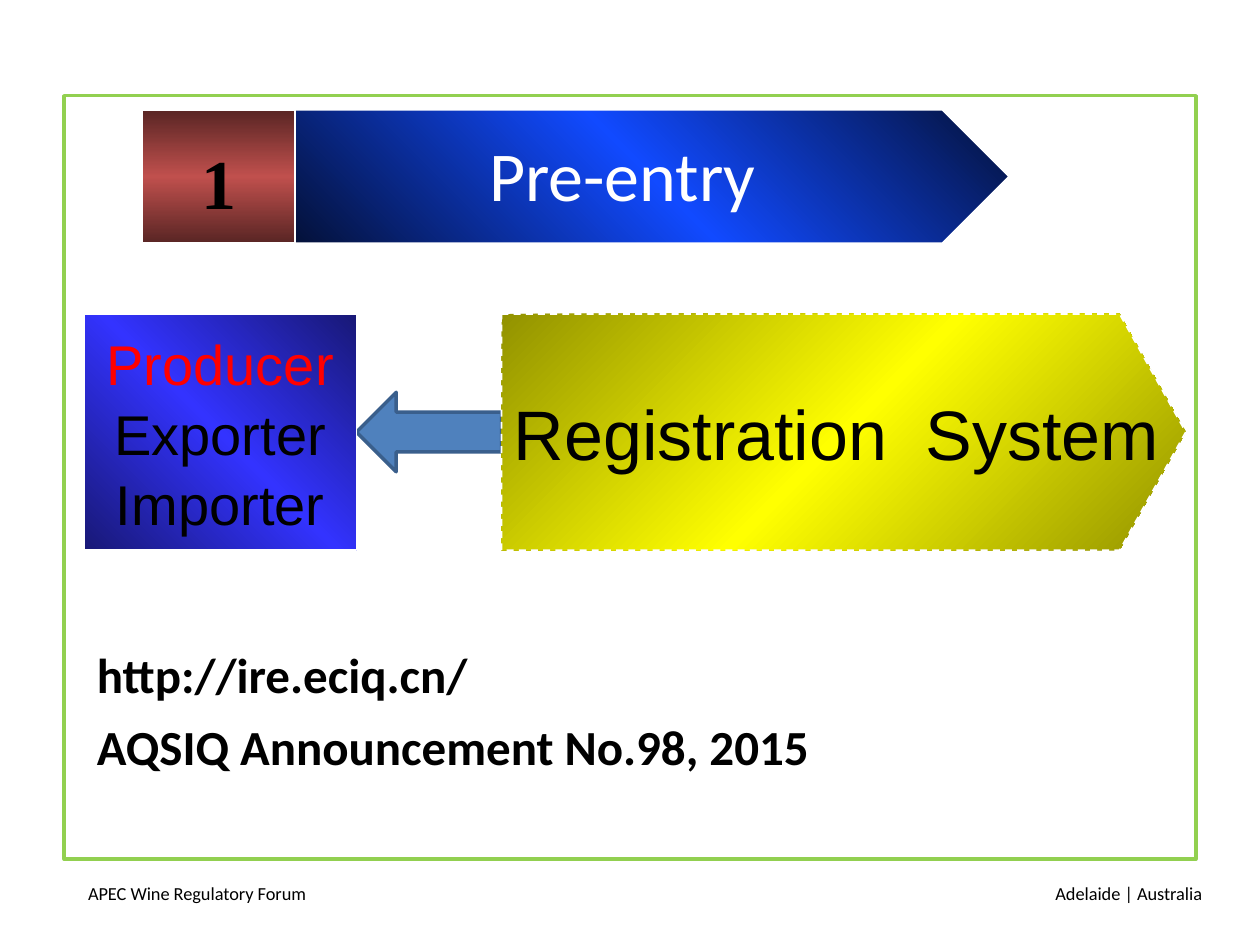
from copy import deepcopy
from dataclasses import dataclass

from pptx import Presentation
from pptx.dml.color import RGBColor
from pptx.enum.dml import MSO_LINE_DASH_STYLE as Dash
from pptx.enum.shapes import MSO_SHAPE as Shape
from pptx.enum.text import MSO_ANCHOR as Anchor, MSO_AUTO_SIZE as AutoSize, PP_ALIGN as Align
from pptx.oxml.xmlchemy import OxmlElement
from pptx.util import Pt


@dataclass(frozen=True)
class Theme:
    body_font: str = "Calibri"
    shape_font: str = "Arial"
    number_font: str = "Times New Roman"
    heading: int = 40
    role: int = 32
    reference: int = 28
    footer: float = 10.5
    black: str = "000000"
    white: str = "FFFFFF"
    highlight: str = "FF0000"
    frame: str = "92D050"
    arrow: str = "4F81BD"
    arrow_line: str = "3A5F8C"
    navy: tuple = ("041139", "114AFF")
    brick: tuple = ("592524", "C0504D")
    yellow: tuple = ("929200", "FFFF00")
    indigo: tuple = ("181876", "3333FF")


THEME = Theme()
TITLE = "Pre-entry"
NUMBER = "1"
SYSTEM = "Registration  System"
ROLES = [("Producer", THEME.highlight), ("Exporter", THEME.black), ("Importer", THEME.black)]
REFERENCES = ["http://ire.eciq.cn/", "AQSIQ Announcement No.98, 2015"]
FOOTERS = [
    ("APEC Wine Regulatory Forum", 43.2, Align.LEFT),
    ("Adelaide | Australia", 524.9, Align.RIGHT),
]

BANNER_TOP, BANNER_HEIGHT = 62.8, 76.2
NUMBER_LEFT, NUMBER_WIDTH, BANNER_WIDTH = 81.4, 87.1, 408.2
FLOW_TOP, FLOW_HEIGHT = 179.4, 135
ROLES_LEFT, ROLES_WIDTH = 48.2, 155.5
ARROW_WIDTH, ARROW_HEIGHT = 82.9, 45.4
SYSTEM_WIDTH = 391


def place(shape, left, top, width, height):
    shape.left, shape.top = Pt(left), Pt(top)
    shape.width, shape.height = Pt(width), Pt(height)


def add_outlined(slide, kind, box, line_color, line_width):
    shape = slide.shapes.add_shape(kind, *(Pt(length) for length in box))
    shape.shadow.inherit = False
    shape.fill.background()
    shape.line.color.rgb = RGBColor.from_string(line_color)
    shape.line.width = Pt(line_width)
    return shape


def fill_gradient(shape, colors, angle):
    shape.fill.gradient()
    shape.fill.gradient_angle = angle
    edge, middle = shape.fill.gradient_stops
    edge.color.rgb, middle.color.rgb = (RGBColor.from_string(color) for color in colors)
    edge.position, middle.position = 0, 0.5
    stops = shape.fill._fill._gradFill.gsLst
    stops.append(deepcopy(stops[0]))
    shape.fill.gradient_stops[2].position = 1


def write(frame, lines, font_name, size, align=Align.LEFT, bold=False, spacing=1.0, gap=0,
          plain_list=False):
    for index, (text, color) in enumerate(lines):
        paragraph = frame.paragraphs[0] if index == 0 else frame.add_paragraph()
        if plain_list:
            properties = paragraph._p.get_or_add_pPr()
            properties.set("marL", "0")
            properties.set("indent", "0")
            properties.append(OxmlElement("a:buNone"))
        paragraph.alignment = align
        paragraph.line_spacing = spacing
        paragraph.space_before = Pt(gap if index else 0)
        run = paragraph.add_run()
        run.text = text
        run.font.name = font_name
        run.font.size = Pt(size)
        run.font.bold = bold
        run.font.color.rgb = RGBColor.from_string(color)


def add_frame_and_footers(slide):
    add_outlined(slide, Shape.RECTANGLE, (36.7, 54.7, 646.6, 436.3), THEME.frame, 2)
    for text, left, align in FOOTERS:
        box = slide.shapes.add_textbox(Pt(left), Pt(500.4), Pt(169.2), Pt(28.8))
        box.text_frame.word_wrap = True
        write(box.text_frame, [(text, THEME.black)], THEME.body_font, THEME.footer, align)


def add_banner(slide):
    banner_left = NUMBER_LEFT + NUMBER_WIDTH
    banner = add_outlined(slide, Shape.PENTAGON,
                          (banner_left, BANNER_TOP, BANNER_WIDTH, BANNER_HEIGHT), THEME.white, 1)
    banner.adjustments[0] = 0.5
    fill_gradient(banner, THEME.navy, 45)

    number = add_outlined(slide, Shape.RECTANGLE,
                          (NUMBER_LEFT, BANNER_TOP, NUMBER_WIDTH, BANNER_HEIGHT), THEME.white, 1)
    fill_gradient(number, THEME.brick, 270)
    frame = number.text_frame
    frame.word_wrap = False
    frame.vertical_anchor = Anchor.MIDDLE
    frame.margin_top = Pt(9)
    write(frame, [(NUMBER, THEME.black)], THEME.number_font, THEME.heading, Align.CENTER, True)

    title = slide.shapes.title
    place(title, 224.6, 71, 262, 56)
    slide.shapes._spTree.append(title._element)
    title.text_frame.auto_size = AutoSize.NONE
    title.text_frame.vertical_anchor = Anchor.MIDDLE
    write(title.text_frame, [(TITLE, THEME.white)], THEME.body_font, THEME.heading, Align.CENTER)


def add_flow(slide):
    arrow_left = ROLES_LEFT + ROLES_WIDTH
    system_left = arrow_left + ARROW_WIDTH
    arrow_top = FLOW_TOP + (FLOW_HEIGHT - ARROW_HEIGHT) / 2
    arrow = add_outlined(slide, Shape.LEFT_ARROW,
                         (arrow_left, arrow_top, ARROW_WIDTH, ARROW_HEIGHT), THEME.arrow_line, 2)
    arrow.fill.solid()
    arrow.fill.fore_color.rgb = RGBColor.from_string(THEME.arrow)

    system = add_outlined(slide, Shape.PENTAGON,
                          (system_left, FLOW_TOP, SYSTEM_WIDTH, FLOW_HEIGHT), THEME.white, 1)
    system.adjustments[0] = 0.28
    system.line.dash_style = Dash.DASH
    fill_gradient(system, THEME.yellow, 315)
    system.text_frame.word_wrap = False
    system.text_frame.vertical_anchor = Anchor.MIDDLE
    write(system.text_frame, [(SYSTEM, THEME.black)], THEME.shape_font, THEME.heading)

    roles = add_outlined(slide, Shape.RECTANGLE,
                         (ROLES_LEFT, FLOW_TOP, ROLES_WIDTH, FLOW_HEIGHT), THEME.white, 1)
    fill_gradient(roles, THEME.indigo, 45)
    frame = roles.text_frame
    frame.vertical_anchor = Anchor.MIDDLE
    frame.margin_left = frame.margin_right = frame.margin_top = frame.margin_bottom = 0
    write(frame, ROLES, THEME.shape_font, THEME.role, Align.CENTER, spacing=1.04)


def add_references(slide):
    body = slide.placeholders[1]
    place(body, 48.2, 363, 620, 119)
    body.text_frame.auto_size = AutoSize.NONE
    lines = [(text, THEME.black) for text in REFERENCES]
    write(body.text_frame, lines, THEME.body_font, THEME.reference, bold=True, spacing=1.05,
          gap=5.6, plain_list=True)


def main():
    presentation = Presentation()
    presentation.slide_width, presentation.slide_height = Pt(720), Pt(540)
    slide = presentation.slides.add_slide(presentation.slide_layouts[1])
    add_frame_and_footers(slide)
    add_references(slide)
    add_banner(slide)
    add_flow(slide)
    presentation.save("out.pptx")


if __name__ == "__main__":
    main()
